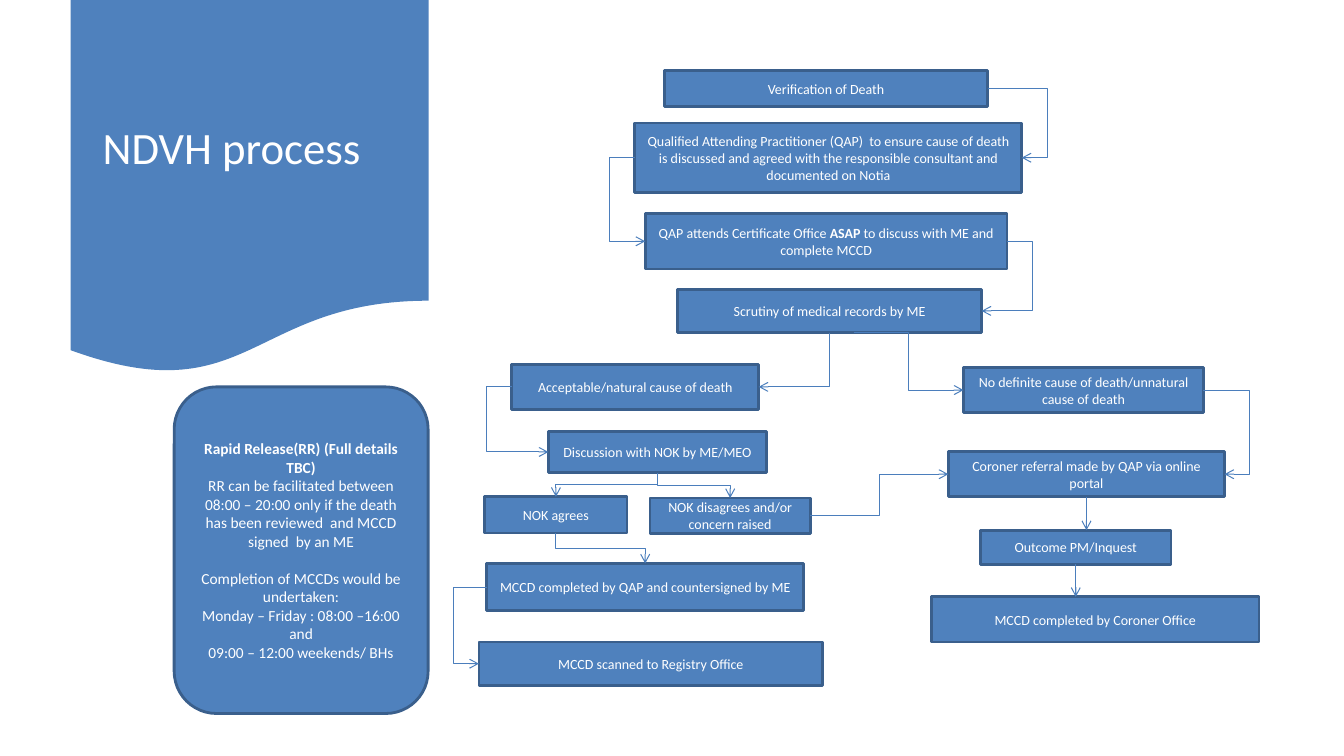
from pptx import Presentation
from pptx.dml.color import RGBColor
from pptx.enum.shapes import MSO_CONNECTOR as LINK, MSO_SHAPE as SHAPE
from pptx.enum.text import MSO_ANCHOR as ANCHOR, PP_ALIGN as ALIGN
from pptx.oxml.ns import qn
from pptx.util import Cm, Pt
from lxml.etree import SubElement

# Content: lengths in cm, *text* is bold
TITLE = "NDVH process"
BANNER_AT = (1.78, 0, 9.02, 9.45)
TITLE_AT = (2.34, 0.48, 7.9, 6.58)
PANEL_AT = (4.39, 9.75, 6.4, 8.23)
PANEL = [
    "*Rapid Release(RR) (Full details TBC)*",
    "RR can be facilitated between 08:00 – 20:00 only if the death "
    "has been reviewed  and MCCD signed  by an ME",
    "Completion of MCCDs would be undertaken:",
    "Monday – Friday : 08:00 –16:00",
    "and",
    "09:00 – 12:00 weekends/ BHs",
]
GAP_BEFORE = {2: 13.2}  # panel paragraph: points above it

STEPS = {  # name: (left, top, width, height, text)
    "verify": (16.74, 1.78, 8.15, 0.91, "Verification of Death"),
    "ensure": (16, 3.1, 9.75, 1.75,
               "Qualified Attending Practitioner (QAP)  to ensure cause of death is "
               "discussed and agreed with the responsible consultant and documented on Notia"),
    "attend": (16.26, 5.38, 9.12, 1.4,
               "QAP attends Certificate Office *ASAP* to discuss with ME and complete MCCD"),
    "scrutiny": (17.07, 7.29, 7.67, 1.09, "Scrutiny of medical records by ME"),
    "natural": (12.9, 9.19, 6.22, 1.12, "Acceptable/natural cause of death"),
    "unnatural": (24.28, 9.27, 6.05, 1.12,
                  "No definite cause of death/unnatural cause of death"),
    "discuss": (13.82, 10.87, 5.49, 1.04, "Discussion with NOK by ME/MEO"),
    "agrees": (12.22, 12.52, 3.58, 0.91, "NOK agrees"),
    "disagrees": (16.38, 12.55, 4.04, 0.89, "NOK disagrees and/or concern raised"),
    "completed": (12.27, 14.2, 7.98, 1.19, "MCCD completed by QAP and countersigned by ME"),
    "scanned": (12.07, 16.18, 8.66, 1.09, "MCCD scanned to Registry Office"),
    "referral": (23.9, 11.38, 6.96, 1.14, "Coroner referral made by QAP via online portal"),
    "outcome": (24.71, 13.36, 4.8, 0.86, "Outcome PM/Inquest"),
    "coroner": (23.47, 15.04, 8.26, 1.14, "MCCD completed by Coroner Office"),
}
SIDE_LINKS = [  # leave and arrive sideways: step, side, step, side
    ("verify", "right", "ensure", "right"),
    ("ensure", "left", "attend", "left"),
    ("attend", "right", "scrutiny", "right"),
    ("scrutiny", "fork", "unnatural", "left"),
    ("natural", "left", "discuss", "left"),
    ("unnatural", "right", "referral", "right"),
    ("disagrees", "right", "referral", "left"),
    ("completed", "left", "scanned", "left"),
]
DOWN_LINKS = [  # leave downwards: step, step, side
    ("scrutiny", "natural", "right"),
    ("discuss", "agrees", "top"),
    ("discuss", "disagrees", "top"),
    ("agrees", "completed", "top"),
]
STRAIGHT_LINKS = [("referral", "outcome"), ("outcome", "coroner")]
LANE = 0.64  # how far a detour runs outside the boxes
FORK = 0.61  # second exit, right of the bottom centre

THEME = {
    "font": "Calibri",
    "fill": RGBColor.from_string("4F81BD"),
    "edge": RGBColor.from_string("3A5F8C"),
    "link": RGBColor.from_string("4B7EBC"),
    "text": RGBColor.from_string("FFFFFF"),
    "title": 32, "panel": 11, "step": 10,
    "edge_width": 2, "link_width": 0.75,
}

prs = Presentation()
prs.slide_width, prs.slide_height = Cm(33.87), Cm(19.05)
slide = prs.slides.add_slide(prs.slide_layouts[6])


def write(s, paragraphs, size, align=ALIGN.CENTER, after=0, spacing=1, gaps=None):
    tf = s.text_frame
    tf.word_wrap = True
    tf.vertical_anchor = ANCHOR.MIDDLE
    for i, text in enumerate(paragraphs):
        p = tf.add_paragraph() if i else tf.paragraphs[0]
        p.alignment, p.line_spacing = align, spacing
        p.space_before, p.space_after = Pt((gaps or {}).get(i, 0)), Pt(after)
        for j, part in enumerate(text.split("*")):
            if part:
                r = p.add_run()
                r.text = part
                r.font.name, r.font.size = THEME["font"], Pt(size)
                r.font.bold = j % 2 == 1
                r.font.color.rgb = THEME["text"]


def block(kind, at, edge=True):
    s = slide.shapes.add_shape(kind, *map(Cm, at))
    s.shadow.inherit = False
    s.fill.solid()
    s.fill.fore_color.rgb = THEME["fill"]
    if edge:
        s.line.color.rgb = THEME["edge"]
        s.line.width = Pt(THEME["edge_width"])
    else:
        s.line.fill.background()
    return s


def site(name, side):
    x, y, w, h, _ = STEPS[name]
    return {"left": (x, y + h / 2), "right": (x + w, y + h / 2),
            "top": (x + w / 2, y), "bottom": (x + w / 2, y + h),
            "fork": (x + w / 2 + FORK, y + h)}[side]


def arrow(kind, start, end, bend=None, turn=0, preset=None):
    c = slide.shapes.add_connector(kind, *map(Cm, (*start, *end)))
    c.line.color.rgb = THEME["link"]
    c.line.width = Pt(THEME["link_width"])
    sp = c._element.spPr
    SubElement(sp.find(qn("a:ln")), qn("a:tailEnd"), type="arrow")
    SubElement(sp, qn("a:effectLst"))
    geom = sp.find(qn("a:prstGeom"))
    if preset:
        geom.set("prst", preset)
    if bend is not None:
        guide = SubElement(geom.find(qn("a:avLst")), qn("a:gd"), name="adj1")
        guide.set("fmla", f"val {round(bend * 100000)}")
    if turn:
        sp.find(qn("a:xfrm")).set("rot", str(turn * 60000))


def side_arrow(a, a_side, b, b_side):
    start, end = site(a, a_side), site(b, b_side)
    x1, x2 = start[0], end[0]
    lane = (x1 + x2) / 2
    if a_side == b_side:
        lane = max(x1, x2) + LANE if a_side == "right" else min(x1, x2) - LANE
    arrow(LINK.ELBOW, start, end, bend=(lane - x1) / (x2 - x1))


def down_arrow(a, b, b_side):
    # An elbow leaves sideways, so it is laid flat and then turned
    (x1, y1), (x2, y2) = site(a, "bottom"), site(b, b_side)
    cx, cy = (x1 + x2) / 2, (y1 + y2) / 2
    half_w, half_h = (y2 - y1) / 2, abs(x2 - x1) / 2
    flip = -1 if x2 > x1 else 1
    arrow(LINK.ELBOW, (cx - flip * half_w, cy - half_h), (cx + flip * half_w, cy + half_h),
          turn=90 if flip == 1 else 270,
          preset=None if b_side == "top" else "bentConnector2")


# Banner and title
block(SHAPE.FLOWCHART_DOCUMENT, BANNER_AT, edge=False)
title = slide.shapes.add_textbox(*map(Cm, TITLE_AT))
write(title, [TITLE], THEME["title"], align=ALIGN.LEFT, spacing=0.9)

# Flowchart steps
for *at, text in STEPS.values():
    write(block(SHAPE.FLOWCHART_PROCESS, at), [text], THEME["step"], after=6)

# Arrows between steps
for link in SIDE_LINKS:
    side_arrow(*link)
for link in DOWN_LINKS:
    down_arrow(*link)
for a, b in STRAIGHT_LINKS:
    x, y = site(a, "bottom")
    arrow(LINK.STRAIGHT, (x, y), (x, site(b, "top")[1]))

# Rapid release panel
panel = block(SHAPE.ROUNDED_RECTANGLE, PANEL_AT)
write(panel, PANEL, THEME["panel"], gaps=GAP_BEFORE)

prs.save("out.pptx")
